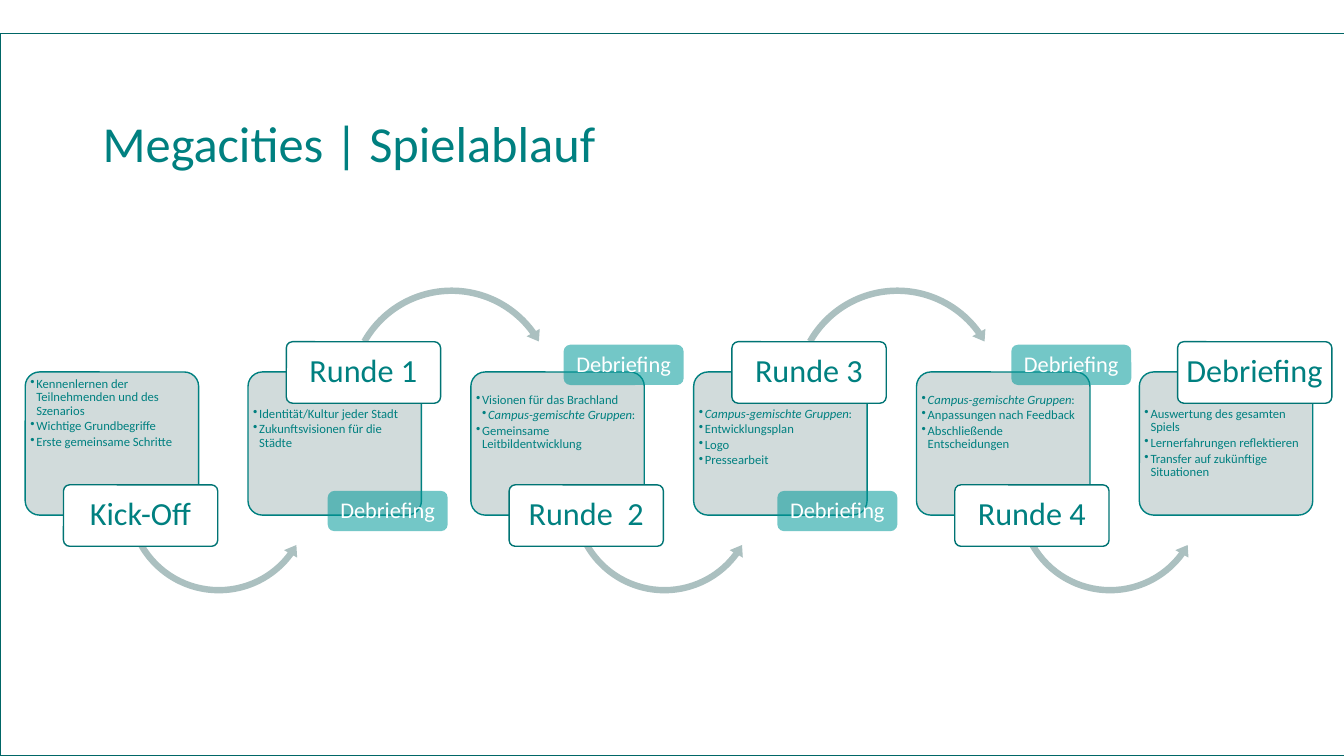
from dataclasses import dataclass

from lxml.etree import SubElement
from pptx import Presentation
from pptx.dml.color import RGBColor
from pptx.enum.shapes import MSO_SHAPE as Preset
from pptx.enum.text import MSO_ANCHOR as Anchor, PP_ALIGN as Align
from pptx.oxml.ns import qn
from pptx.shapes.autoshape import Shape
from pptx.slide import Slide
from pptx.text.text import TextFrame, _Paragraph as Paragraph
from pptx.util import Inches, Pt

FONT = "Calibri"
COLORS = {
    "white": "FFFFFF",
    "frame": "006666",
    "text": "008080",
    "panel": "CCD8D8",
    "label_line": "007474",
    "arrow": "ABC0C0",
    "badge": "009999",
}
FIRST_LEFT, PITCH = 0.25, 2.21
INDENT = 0.06


@dataclass(frozen=True)
class Bullet:
    text: str
    italic: str = ""
    level: int = 1


@dataclass(frozen=True)
class Stage:
    label: str
    bullets: tuple[Bullet, ...]
    extra_top: float = 0


@dataclass(frozen=True)
class Side:
    label_top: float
    arrow: Preset
    arrow_offset: float
    arrow_top: float
    arrow_size: float
    adjustments: tuple[float, ...]
    inset_top: float
    inset_bottom: float


LABEL_BELOW = Side(4.81, Preset.LEFT_CIRCULAR_ARROW, 0.96, 4.01, 1.92,
                   (0.033, 4.08, 21.835, 90.245, 0.039), 0.01, 0.31)
LABEL_ABOVE = Side(3.39, Preset.CIRCULAR_ARROW, 0.95, 2.81, 2.14,
                   (0.03, 3.633, 194.612, 125.755, 0.035), 0.31, 0.01)

MIXED_GROUPS = "Campus-gemischte Gruppen"
STAGES = (
    Stage("Kick-Off", (
        Bullet("Kennenlernen der Teilnehmenden und des Szenarios"),
        Bullet("Wichtige Grundbegriffe"),
        Bullet("Erste gemeinsame Schritte"))),
    Stage("Runde 1", (
        Bullet("Identität/Kultur jeder Stadt"),
        Bullet("Zukunftsvisionen für die Städte"))),
    Stage("Runde  2", (
        Bullet("Visionen für das Brachland"),
        Bullet(":", MIXED_GROUPS, 2),
        Bullet("Gemeinsame Leitbildentwicklung")), 0.16),
    Stage("Runde 3", (
        Bullet(":", MIXED_GROUPS),
        Bullet("Entwicklungsplan"),
        Bullet("Logo"),
        Bullet("Pressearbeit"))),
    Stage("Runde 4", (
        Bullet(":", MIXED_GROUPS),
        Bullet("Anpassungen nach Feedback"),
        Bullet("Abschließende Entscheidungen")), 0.16),
    Stage("Debriefing", (
        Bullet("Auswertung des gesamten Spiels"),
        Bullet("Lernerfahrungen reflektieren"),
        Bullet("Transfer auf zukünftige Situationen"))),
)
BADGE_POSITIONS = ((3.25, 4.87), (5.59, 3.42), (10.03, 3.42), (7.71, 4.87))


def color(name: str) -> RGBColor:
    return RGBColor.from_string(COLORS[name])


def add_box(slide: Slide, preset: Preset, left: float, top: float, width: float,
            height: float, fill: str, line: str = "", opacity: int = 100) -> Shape:
    shape = slide.shapes.add_shape(
        preset, Inches(left), Inches(top), Inches(width), Inches(height))
    shape.shadow.inherit = False
    shape.fill.solid()
    shape.fill.fore_color.rgb = color(fill)
    if opacity < 100:
        fill_color = next(shape._element.spPr.iter(qn("a:srgbClr")))
        SubElement(fill_color, qn("a:alpha"), val=str(opacity * 1000))
    if line:
        shape.line.color.rgb = color(line)
        shape.line.width = Pt(1)
    else:
        shape.line.fill.background()
    return shape


def set_insets(frame: TextFrame, side: float, top: float, bottom: float) -> None:
    frame.word_wrap = True
    frame.margin_left = frame.margin_right = Inches(side)
    frame.margin_top, frame.margin_bottom = Inches(top), Inches(bottom)


def style_paragraph(paragraph: Paragraph, size: float, font_color: str = "text",
                    align: Align = Align.LEFT, spacing: float = 0.9) -> None:
    paragraph.alignment = align
    paragraph.line_spacing = spacing
    paragraph.font.name = FONT
    paragraph.font.size = Pt(size)
    paragraph.font.color.rgb = color(font_color)


def add_caption(shape: Shape, text: str, size: float, font_color: str = "text") -> None:
    frame = shape.text_frame
    set_insets(frame, 0.05, 0.03, 0.03)
    frame.vertical_anchor = Anchor.MIDDLE
    frame.text = text
    style_paragraph(frame.paragraphs[0], size, font_color, Align.CENTER)


def write_bullet(paragraph: Paragraph, bullet: Bullet) -> None:
    properties = paragraph._p.get_or_add_pPr()
    properties.set("marL", str(Inches(INDENT * bullet.level)))
    properties.set("indent", str(Inches(-INDENT)))
    SubElement(properties, qn("a:buChar"), char="•")
    paragraph.level = bullet.level
    paragraph.space_after = Pt(1.35)
    style_paragraph(paragraph, 9)
    if bullet.italic:
        run = paragraph.add_run()
        run.text = bullet.italic
        run.font.italic = True
    paragraph.add_run().text = bullet.text


def add_stage(slide: Slide, index: int, stage: Stage) -> None:
    side = LABEL_ABOVE if index % 2 else LABEL_BELOW
    left = FIRST_LEFT + index * PITCH
    panel = add_box(slide, Preset.ROUNDED_RECTANGLE, left, 3.69, 1.72, 1.42,
                    "panel", "text", 90)
    panel.adjustments[0] = 0.1
    frame = panel.text_frame
    set_insets(frame, 0.01, side.inset_top + stage.extra_top, side.inset_bottom)
    frame.vertical_anchor = Anchor.TOP
    for number, bullet in enumerate(stage.bullets):
        write_bullet(frame.add_paragraph() if number else frame.paragraphs[0], bullet)

    if index < len(STAGES) - 1:
        arrow = add_box(slide, side.arrow, left + side.arrow_offset, side.arrow_top,
                        side.arrow_size, side.arrow_size, "arrow")
        for number, value in enumerate(side.adjustments):
            arrow.adjustments[number] = value

    label = add_box(slide, Preset.ROUNDED_RECTANGLE, left + 0.38, side.label_top,
                    1.53, 0.61, "white", "label_line")
    label.adjustments[0] = 0.1
    add_caption(label, stage.label, 23)


def add_title(slide: Slide, text: str) -> None:
    title = slide.shapes.add_textbox(Inches(0.92), Inches(1.06), Inches(11.5), Inches(0.79))
    frame = title.text_frame
    frame.word_wrap = True
    frame.vertical_anchor = Anchor.MIDDLE
    frame.text = text
    style_paragraph(frame.paragraphs[0], 36)


def main() -> None:
    presentation = Presentation()
    presentation.slide_width, presentation.slide_height = Inches(13.33), Inches(7.5)
    slide = presentation.slides.add_slide(presentation.slide_layouts[6])
    add_box(slide, Preset.RECTANGLE, 0, 0.33, 13.47, 7.17, "white", "frame")
    add_title(slide, "Megacities | Spielablauf")
    for index, stage in enumerate(STAGES):
        add_stage(slide, index, stage)
    for left, top in BADGE_POSITIONS:
        badge = add_box(slide, Preset.ROUNDED_RECTANGLE, left, top, 1.19, 0.4,
                        "badge", opacity=55)
        add_caption(badge, "Debriefing", 16, "white")
    presentation.save("out.pptx")


if __name__ == "__main__":
    main()
